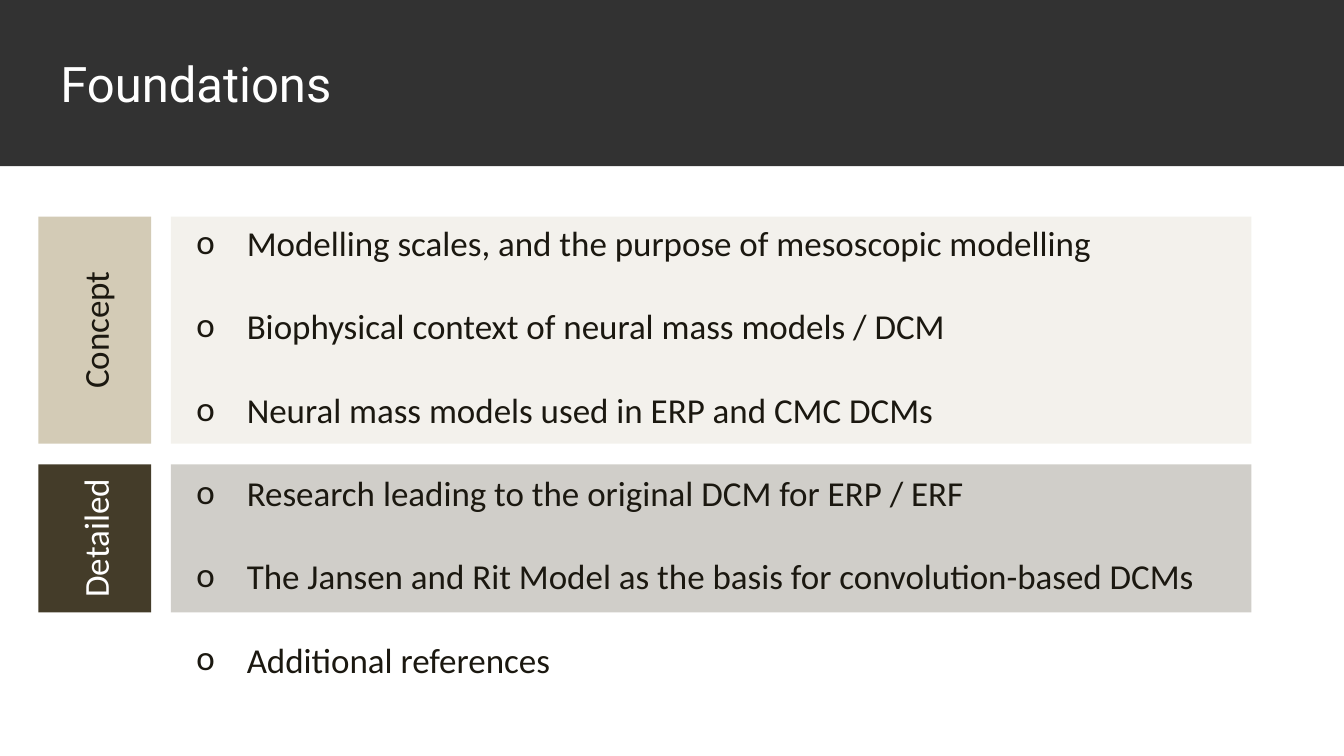
from lxml.etree import SubElement
from pptx import Presentation
from pptx.dml.color import RGBColor
from pptx.enum.shapes import MSO_SHAPE as Shape
from pptx.enum.text import MSO_ANCHOR as Anchor, PP_ALIGN as Align
from pptx.oxml.ns import qn
from pptx.util import Cm, Pt

TITLE = "Foundations"
TOPICS = [
    "Modelling scales, and the purpose of mesoscopic modelling",
    "Biophysical context of neural mass models / DCM",
    "Neural mass models used in ERP and CMC DCMs",
    "Research leading to the original DCM for ERP / ERF",
    "The Jansen and Rit Model as the basis for convolution-based DCMs",
    "Additional references",
]
SECTIONS = [
    {"label": "Concept", "top": 5.46, "height": 5.72, "fill": "sand", "ink": "ink"},
    {"label": "Detailed", "top": 11.7, "height": 3.73, "fill": "brown", "ink": "white"},
]
COLORS = {"banner": "323232", "sand": "D3CBB6", "brown": "443C29",
          "ink": "1B1810", "white": "FFFFFF"}
LABEL_LEFT, LABEL_WIDTH = 0.97, 2.84
PANEL_LEFT, PANEL_WIDTH = 4.31, 27.23
TEXT_SIZE = 25
TOPIC_GAP = 29.5


def rgb(name):
    return RGBColor.from_string(COLORS[name])


def add_block(slide, left, top, width, height, fill, rotation=0, alpha=None):
    if rotation:
        left, top = left + (width - height) / 2, top + (height - width) / 2
        width, height = height, width
    block = slide.shapes.add_shape(
        Shape.RECTANGLE, Cm(left), Cm(top), Cm(width), Cm(height))
    block.rotation = rotation
    block.shadow.inherit = False
    block.line.fill.background()
    block.fill.solid()
    block.fill.fore_color.rgb = rgb(fill)
    if alpha:
        color = block.fill._xPr.find(qn("a:solidFill"))[0]
        SubElement(color, qn("a:alpha"), val=str(alpha * 1000))
    return block


def write(paragraph, text, size, font, color):
    run = paragraph.add_run()
    run.text = text
    run.font.size = Pt(size)
    run.font.name = font
    run.font.color.rgb = rgb(color)


def indent(paragraph, margin, first=0):
    props = paragraph._p.get_or_add_pPr()
    props.set("marL", str(Cm(margin)))
    props.set("indent", str(Cm(first)))
    return props


def add_banner(slide):
    banner = add_block(slide, 0, 0, 33.87, 4.19, "banner")
    banner.text_frame.vertical_anchor = Anchor.MIDDLE
    heading = banner.text_frame.paragraphs[0]
    heading.alignment = Align.LEFT
    indent(heading, 1.27)
    write(heading, TITLE, 35, "Roboto", "white")


def add_topics(slide):
    frame = slide.shapes.add_textbox(
        Cm(3.43), Cm(5.46), Cm(30.43), Cm(12.4)).text_frame
    frame.word_wrap = True
    for index, topic in enumerate(TOPICS):
        line = frame.add_paragraph() if index else frame.paragraphs[0]
        line.space_before = Pt(TOPIC_GAP if index else 0)
        props = indent(line, 2.54, -1.27)
        SubElement(props, qn("a:buFont"), typeface="Calibri")
        SubElement(props, qn("a:buChar"), char="o")
        write(line, topic, TEXT_SIZE, "Calibri", "ink")


def add_label(slide, section):
    tab = add_block(slide, LABEL_LEFT, section["top"], LABEL_WIDTH,
                    section["height"], section["fill"], rotation=270)
    tab.text_frame.vertical_anchor = Anchor.MIDDLE
    caption = tab.text_frame.paragraphs[0]
    caption.alignment = Align.CENTER
    write(caption, section["label"], TEXT_SIZE, "Calibri", section["ink"])


def main():
    """Build the Foundations overview slide."""
    deck = Presentation()
    deck.slide_width, deck.slide_height = Cm(33.87), Cm(19.05)
    slide = deck.slides.add_slide(deck.slide_layouts[6])
    for section in reversed(SECTIONS):
        add_block(slide, PANEL_LEFT, section["top"], PANEL_WIDTH,
                  section["height"], section["fill"], rotation=270, alpha=25)
    add_banner(slide)
    add_topics(slide)
    for section in SECTIONS:
        add_label(slide, section)
    deck.save("out.pptx")


if __name__ == "__main__":
    main()
